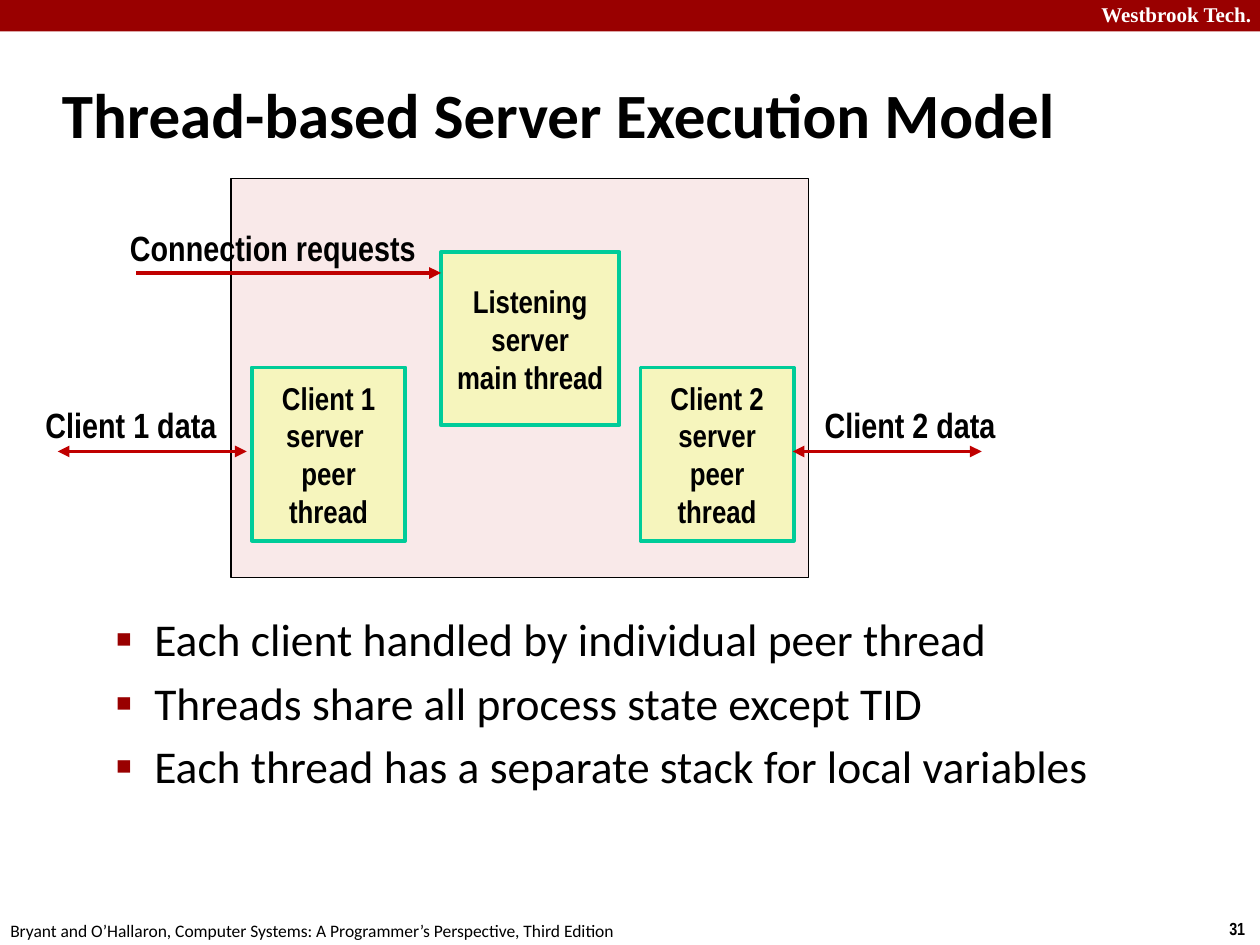
import pptx
import pptx.util
import pptx.dml.color
import pptx.enum.shapes
import pptx.enum.text
import pptx.oxml
import pptx.oxml.ns

Inches, Pt = pptx.util.Inches, pptx.util.Pt
ALIGN = pptx.enum.text.PP_ALIGN
ANCHOR = pptx.enum.text.MSO_ANCHOR
AUTO_SIZE = pptx.enum.text.MSO_AUTO_SIZE
RECTANGLE = pptx.enum.shapes.MSO_SHAPE.RECTANGLE
STRAIGHT = pptx.enum.shapes.MSO_CONNECTOR.STRAIGHT

COLORS = {
    "band": "990000", "white": "FFFFFF", "text": "000000",
    "process": "F1C7C7", "thread": "F6F5BD", "border": "00CC99",
    "arrow": "C00000",
}
LABEL = {"name": "Arial Narrow", "size": Pt(20), "bold": True}
THREAD = {**LABEL, "size": Pt(18)}
PAGE = {**LABEL, "size": Pt(10)}
TITLE = {"name": "Calibri", "size": Pt(36), "bold": True}
BODY = {"name": "Calibri", "size": Pt(26), "bold": False}
FOOTER = {**BODY, "size": Pt(10)}
BRAND = {"name": "Times New Roman", "size": Pt(12), "bold": True}


def color(key):
    return pptx.dml.color.RGBColor.from_string(COLORS[key])


def cell(count):
    """Length of a number of grid cells, twelve to the inch."""
    return Inches(count / 12)


def add_xml(parent, tag, **attributes):
    element = pptx.oxml.parse_xml(f"<a:{tag} {pptx.oxml.ns.nsdecls('a')}/>")
    for key, value in attributes.items():
        element.set(key, str(value))
    parent.append(element)
    return element


class SlideBuilder:
    """Places elements by column and row on a 120 by 90 grid."""

    def __init__(self, presentation):
        self.slide = presentation.slides.add_slide(presentation.slide_layouts[5])
        self.shapes = self.slide.shapes

    def fill_text(self, shape, lines, font, align=ALIGN.LEFT, wrap=False,
                  anchor=ANCHOR.TOP, ink="text", fit=AUTO_SIZE.NONE):
        frame = shape.text_frame
        frame.text = "\n".join(lines)
        settings = {"word_wrap": wrap, "vertical_anchor": anchor, "auto_size": fit}
        for name, value in settings.items():
            setattr(frame, name, value)
        for paragraph in frame.paragraphs:
            paragraph.alignment = align
            for run in paragraph.runs:
                run.font.color.rgb = color(ink)
                for name, value in font.items():
                    setattr(run.font, name, value)
        return frame

    def title(self, text, left, top, width, height):
        shape = self.shapes.title
        place = {"left": left, "top": top, "width": width, "height": height}
        for name, value in place.items():
            setattr(shape, name, cell(value))
        self.fill_text(shape, [text], TITLE, wrap=True, anchor=ANCHOR.MIDDLE)

    def box(self, left, top, width, height, fill, line=None, weight=1, alpha=None):
        shape = self.shapes.add_shape(RECTANGLE, *map(cell, (left, top, width, height)))
        shape.shadow.inherit = False
        shape.fill.solid()
        shape.fill.fore_color.rgb = color(fill)
        if alpha:
            fill_color = shape.fill._xPr.find(".//" + pptx.oxml.ns.qn("a:srgbClr"))
            add_xml(fill_color, "alpha", val=alpha * 1000)
        if line:
            shape.line.color.rgb = color(line)
            shape.line.width = Pt(weight)
        else:
            shape.line.fill.background()
        return shape

    def thread(self, left, top, width, lines):
        shape = self.box(left, top, width, 16.5, "thread", "border", 2.25)
        self.fill_text(shape, lines, THREAD, ALIGN.CENTER, anchor=ANCHOR.MIDDLE)

    def text(self, text, left, top, width, height, font, **style):
        shape = self.shapes.add_textbox(*map(cell, (left, top, width, height)))
        self.fill_text(shape, [text], font, fit=AUTO_SIZE.SHAPE_TO_FIT_TEXT, **style)

    def bullets(self, lines, left, top, width, height):
        shape = self.shapes.add_textbox(*map(cell, (left, top, width, height)))
        frame = self.fill_text(shape, lines, BODY, wrap=True)
        for paragraph in frame.paragraphs:
            paragraph.level = 1
            paragraph.space_before = Pt(5.2)
            properties = paragraph._p.get_or_add_pPr()
            properties.set("marL", str(Inches(0.81)))
            properties.set("indent", str(Inches(-0.31)))
            bullet_color = add_xml(properties, "buClr")
            add_xml(bullet_color, "srgbClr", val=COLORS["band"])
            add_xml(properties, "buSzPct", val=110000)
            add_xml(properties, "buFont", typeface="Arial")
            add_xml(properties, "buChar", char="▪")

    def arrow(self, start, end, row, ends):
        connector = self.shapes.add_connector(
            STRAIGHT, cell(start), cell(row), cell(end), cell(row))
        connector.line.color.rgb = color("arrow")
        connector.line.width = Pt(2.25)
        line = connector.line._get_or_add_ln()
        for end_tag in ends:
            add_xml(line, end_tag, type="triangle")
        add_xml(connector._element.spPr, "effectLst")


def main():
    presentation = pptx.Presentation()
    presentation.slide_width, presentation.slide_height = Inches(10), Inches(7.5)
    builder = SlideBuilder(presentation)

    # Header band and footer
    builder.box(0, 0, 120, 3, "band")
    builder.text("Westbrook Tech.", 103.7, -0.4, 17.2, 3.6, BRAND, wrap=True, ink="white")
    builder.text("31", 115.9, 86.8, 4.1, 3.2, PAGE)
    builder.text("Bryant and O’Hallaron, Computer Systems: A Programmer’s "
                 "Perspective, Third Edition", -0.2, 87, 61, 3.2, FOOTER)

    # Process and title
    builder.box(22, 17, 55, 38, "process", "text", alpha=38)
    builder.title("Thread-based Server Execution Model", 4.7, 5.8, 99.6, 10)

    # Key points
    builder.bullets(["Each client handled by individual peer thread",
                     "Threads share all process state except TID",
                     "Each thread has a separate stack for local variables"],
                    3.8, 57.6, 109, 26.6)

    # Threads inside the process
    for left, client, server in ((24, "Client 1", "server "), (61, "Client 2", "server")):
        builder.thread(left, 35, 14.6, [client, server, "peer", "thread"])
    builder.thread(42, 24, 17, ["Listening", "server", "main thread"])

    # Traffic between clients and threads
    both_ends = ("headEnd", "tailEnd")
    traffic = (
        ("Connection requests", 10.9, 21, 29.9, 13, 42, 26, ("tailEnd",)),
        ("Client 1 data", 3, 37.8, 18.8, 5.5, 23.5, 43, both_ends),
        ("Client 2 data", 77.2, 37.8, 18.8, 93.5, 75.5, 43, both_ends),
    )
    for label, left, top, width, start, end, row, ends in traffic:
        builder.arrow(start, end, row, ends)
        builder.text(label, left, top, width, 5.3, LABEL, align=ALIGN.RIGHT)

    presentation.save("out.pptx")


if __name__ == "__main__":
    main()
